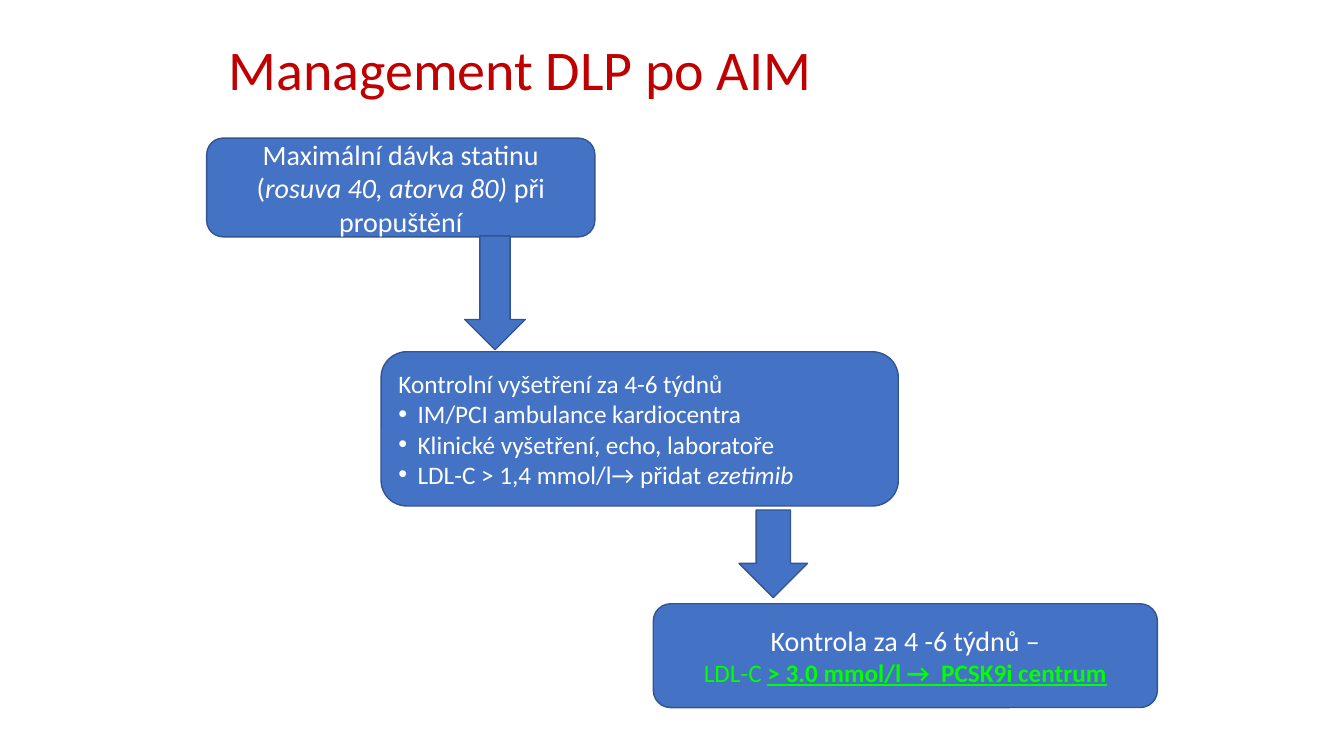
from dataclasses import dataclass

from lxml.etree import SubElement
from pptx import Presentation
from pptx.dml.color import RGBColor
from pptx.enum.shapes import MSO_SHAPE as Shape
from pptx.enum.text import MSO_ANCHOR as Anchor, PP_ALIGN as Align
from pptx.oxml.ns import qn
from pptx.util import Emu, Pt

PX = 9144


@dataclass(frozen=True)
class Theme:
    """Colours, font and type sizes of the slide."""
    font: str = "Calibri"
    title: str = "C00000"
    fill: str = "4472C4"
    line: str = "325491"
    text: str = "FFFFFF"
    accent: str = "00FF00"
    title_size: int = 40
    lead_size: int = 20
    body_size: int = 18
    indent: int = 19


def run(text, **fmt):
    """Pair a piece of text with its format."""
    return text, fmt


class Deck:
    """Holds the theme and the current slide, and draws its elements."""

    def __init__(self, prs, theme):
        """Add a blank slide to draw on."""
        self.theme = theme
        self.slide = prs.slides.add_slide(prs.slide_layouts[6])

    def add_text(self, sp, paragraphs, align=Align.LEFT, bullets_from=None, spacing=None):
        """Fill a shape with paragraphs, each a list of runs."""
        tf = sp.text_frame
        tf.word_wrap = True
        tf.vertical_anchor = Anchor.MIDDLE
        for i, runs in enumerate(paragraphs):
            p = tf.paragraphs[0] if i == 0 else tf.add_paragraph()
            p.alignment = align
            if spacing:
                p.line_spacing = spacing
            if bullets_from is not None and i >= bullets_from:
                self.bullet(p)
            for text, fmt in runs:
                self.add_run(p, text, **fmt)

    def add_run(self, p, text, size=None, color=None, bold=False, italic=False, underline=False):
        """Append one formatted run to a paragraph."""
        r = p.add_run()
        r.text = text
        font = r.font
        font.name = self.theme.font
        font.size = Pt(size or self.theme.body_size)
        font.bold, font.italic, font.underline = bold, italic, underline
        font.color.rgb = RGBColor.from_string(color or self.theme.text)

    def bullet(self, p):
        """Give a paragraph a hanging bullet."""
        pPr = p._p.get_or_add_pPr()
        indent = self.theme.indent * PX
        pPr.set("marL", str(indent))
        pPr.set("indent", str(-indent))
        SubElement(pPr, qn("a:buFont"), typeface="Arial")
        SubElement(pPr, qn("a:buChar"), char="•")

    def title(self, text, *box):
        """Draw the slide title."""
        sp = self.slide.shapes.add_textbox(*(Emu(v * PX) for v in box))
        t = self.theme
        self.add_text(sp, [[run(text, size=t.title_size, color=t.title)]], spacing=0.9)

    def shape(self, kind, *box):
        """Draw a filled and outlined preset shape."""
        sp = self.slide.shapes.add_shape(kind, *(Emu(v * PX) for v in box))
        sp.shadow.inherit = False
        sp.fill.solid()
        sp.fill.fore_color.rgb = RGBColor.from_string(self.theme.fill)
        sp.line.color.rgb = RGBColor.from_string(self.theme.line)
        sp.line.width = Pt(1)
        return sp

    def arrow(self, *box):
        """Draw a block arrow pointing down."""
        self.shape(Shape.DOWN_ARROW, *box)

    def step(self, paragraphs, *box, **fmt):
        """Draw a rounded box with the text of one step."""
        self.add_text(self.shape(Shape.ROUNDED_RECTANGLE, *box), paragraphs, **fmt)


def main():
    """Build the slide and save it."""
    prs = Presentation()
    prs.slide_width, prs.slide_height = Emu(1333 * PX), Emu(750 * PX)
    t = Theme()
    deck = Deck(prs, t)
    deck.title("Management DLP po AIM", 217, 22, 906, 100)
    deck.step([[run("Maximální dávka statinu (", size=t.lead_size),
                run("rosuva 40, atorva 80) ", size=t.lead_size, italic=True),
                run("při propuštění", size=t.lead_size)]],
              205, 137, 385, 98, align=Align.CENTER)
    deck.arrow(461, 234, 60, 113)
    deck.arrow(733, 506, 68, 87)
    deck.step([[run("Kontrolní vyšetření za 4-6 týdnů")],
               [run("IM/PCI ambulance kardiocentra")],
               [run("Klinické vyšetření, echo, laboratoře")],
               [run("LDL-C > 1,4 mmol/l→ přidat "), run("ezetimib", italic=True)]],
              378, 349, 513, 153, bullets_from=1)
    deck.step([[run("Kontrola za 4 -6 týdnů –", size=t.lead_size)],
               [run("LDL-C ", color=t.accent),
                run("> 3.0 mmol/l →  PCSK9i centrum", color=t.accent, bold=True, underline=True)]],
              648, 599, 500, 103, align=Align.CENTER)
    prs.save("out.pptx")


if __name__ == "__main__":
    main()
